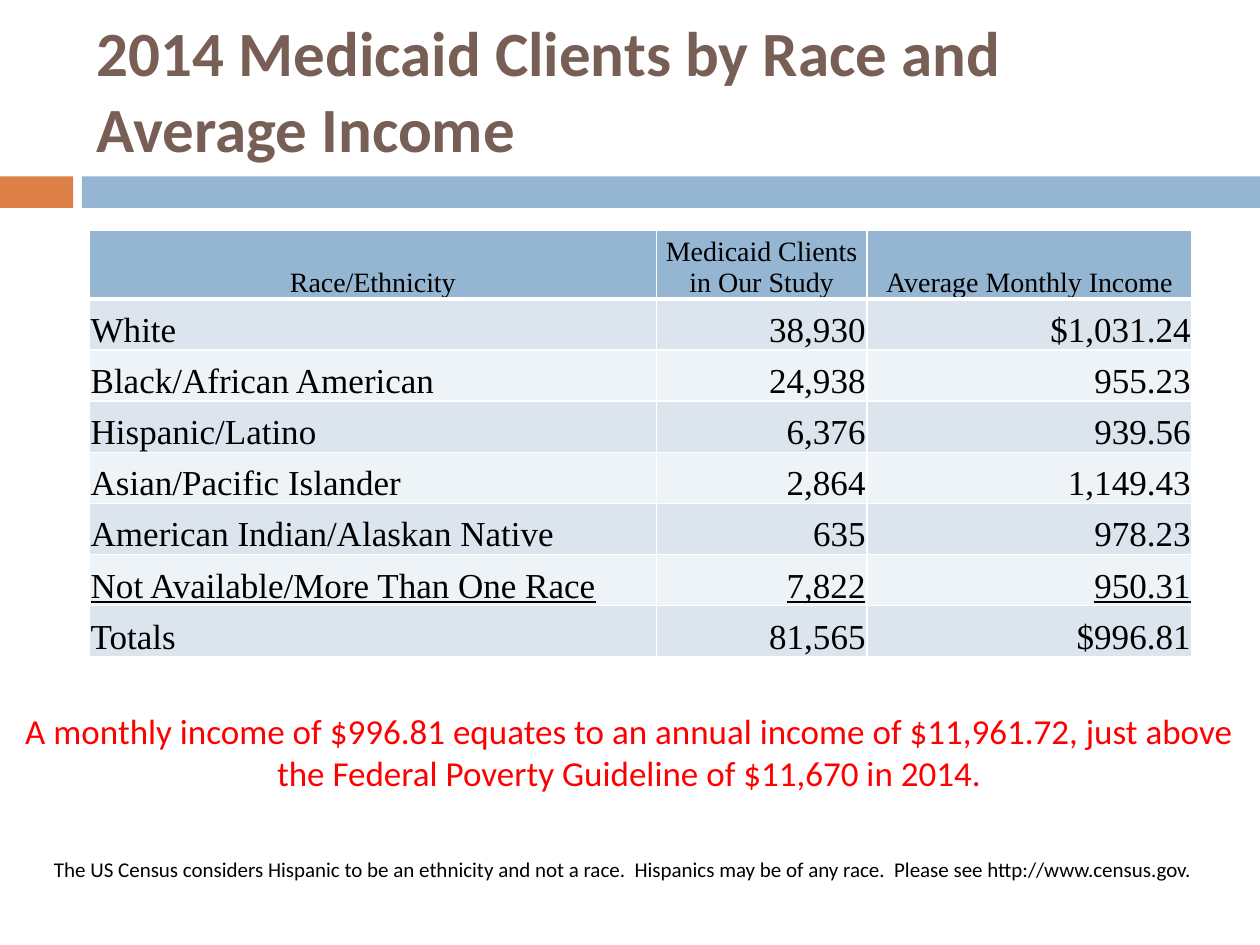
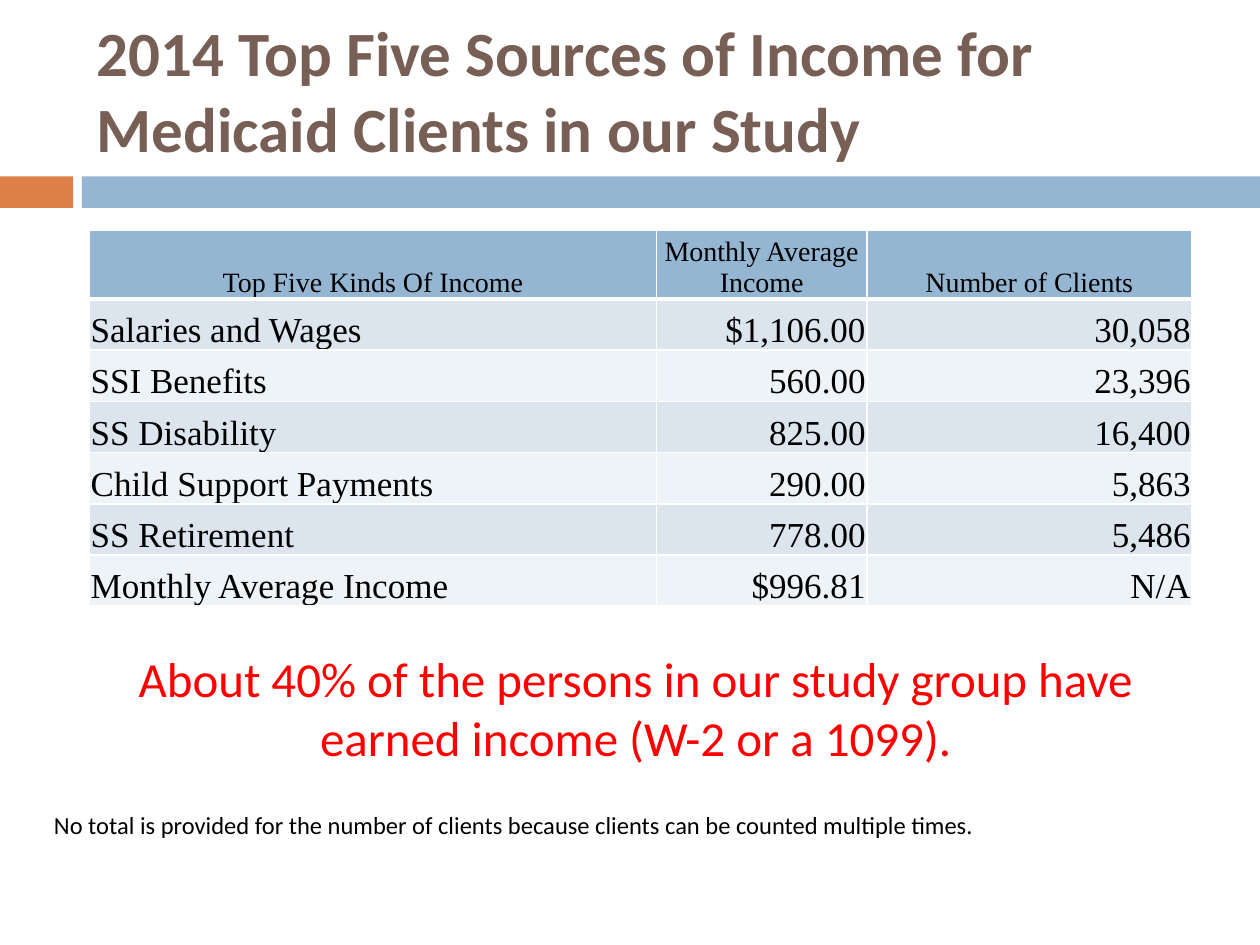
from dataclasses import dataclass

from lxml import etree
from pptx import Presentation
from pptx import util as u
from pptx.dml.color import RGBColor
from pptx.enum import shapes, text
from pptx.oxml import ns

SLIDES = [
    {
        "title": "2014 Medicaid Clients by Race and Average Income",
        "header": ("Race/Ethnicity", "Medicaid Clients in Our Study", "Average Monthly Income"),
        "rows": [
            ("White", "38,930", "$1,031.24"),
            ("Black/African American", "24,938", "955.23"),
            ("Hispanic/Latino", "6,376", "939.56"),
            ("Asian/Pacific Islander", "2,864", "1,149.43"),
            ("American Indian/Alaskan Native", "635", "978.23"),
            ("Not Available/More Than One Race", "7,822", "950.31"),
            ("Totals", "81,565", "$996.81"),
        ],
        "underlined_row": 6,
        "table_height": 3.38,
        "finding": "A monthly income of $996.81 equates to an annual income of $11,961.72, "
                   "just above the Federal Poverty Guideline of $11,670 in 2014.",
        "finding_box": (0.08, 5.58, 9.83, 0.77),
        "finding_size": 20,
        "footnote": "The US Census considers Hispanic to be an ethnicity and not a race.  "
                    "Hispanics may be of any race.  Please see http://www.census.gov.",
        "footnote_box": (0.33, 6.75, 9.42, 0.3),
        "footnote_size": 12,
    },
    {
        "title": "2014 Top Five Sources of Income for Medicaid Clients in our Study",
        "header": ("Top Five Kinds Of Income", "Monthly Average Income", "Number of Clients"),
        "rows": [
            ("Salaries and Wages", "$1,106.00", "30,058"),
            ("SSI Benefits", "560.00", "23,396"),
            ("SS Disability", "825.00", "16,400"),
            ("Child Support Payments", "290.00", "5,863"),
            ("SS Retirement", "778.00", "5,486"),
            ("Monthly Average Income", "$996.81", "N/A"),
        ],
        "underlined_row": None,
        "table_height": 2.98,
        "finding": "About 40% of the persons in our study group have earned income (W-2 or a 1099).",
        "finding_box": (0.71, 5.1, 8.67, 1.04),
        "finding_size": 28,
        "footnote": "No total is provided for the number of clients because clients "
                    "can be counted multiple times.",
        "footnote_box": (0.33, 6.38, 9.42, 0.34),
        "footnote_size": 14,
    },
]

TITLE_BOX = (0.67, 0.17, 8.92, 1.08)
TABLE_LEFT, TABLE_TOP = 0.71, 1.83
COLUMN_WIDTHS = (4.5, 1.67, 2.58)
HEADER_HEIGHT = 0.54


@dataclass(frozen=True)
class Theme:
    title: str = "775F55"
    accent: str = "DD8047"
    band: str = "94B6D2"
    stripes: tuple = ("EEF3F7", "DCE5EE")
    border: str = "FFFFFF"
    body: str = "000000"
    finding: str = "FF0000"
    font: str = "Calibri"
    table_font: str = "Times New Roman"
    title_size: int = 36
    header_size: int = 16
    cell_size: int = 20


THEME = Theme()
BANDS = [((0, 1.4, 0.58, 0.25), THEME.accent), ((0.65, 1.4, 9.35, 0.25), THEME.band)]


def inches(box):
    return [u.Inches(length) for length in box]


def write(frame, words, size, color, font=THEME.font, align=text.PP_ALIGN.LEFT,
          bold=False, underline=False):
    frame.text = words
    paragraph = frame.paragraphs[0]
    paragraph.alignment = align
    for run in paragraph.runs:
        run.font.name = font
        run.font.size = u.Pt(size)
        run.font.bold = bold
        run.font.underline = underline
        run.font.color.rgb = RGBColor.from_string(color)


def add_text(slide, box, words, size, color, anchor=text.MSO_ANCHOR.TOP, **style):
    frame = slide.shapes.add_textbox(*inches(box)).text_frame
    frame.word_wrap = True
    frame.vertical_anchor = anchor
    write(frame, words, size, color, **style)


def add_bands(slide):
    for box, color in BANDS:
        band = slide.shapes.add_shape(shapes.MSO_SHAPE.RECTANGLE, *inches(box))
        band.shadow.inherit = False
        band.fill.solid()
        band.fill.fore_color.rgb = RGBColor.from_string(color)
        band.line.fill.background()


def set_borders(cell, top, bottom):
    properties = cell._tc.get_or_add_tcPr()
    for side, points in (("L", 1), ("R", 1), ("T", top), ("B", bottom)):
        line = etree.SubElement(properties, ns.qn(f"a:ln{side}"), w=str(u.Pt(points)))
        fill = etree.SubElement(line, ns.qn("a:solidFill"))
        etree.SubElement(fill, ns.qn("a:srgbClr"), val=THEME.border)


def add_income_table(slide, content):
    rows = [content["header"], *content["rows"]]
    height = content["table_height"]
    box = (TABLE_LEFT, TABLE_TOP, sum(COLUMN_WIDTHS), height)
    table = slide.shapes.add_table(len(rows), len(COLUMN_WIDTHS), *inches(box)).table
    for column, width in zip(table.columns, COLUMN_WIDTHS):
        column.width = u.Inches(width)
    row_height = (height - HEADER_HEIGHT) / len(content["rows"])

    for row_index, row in enumerate(rows):
        is_header = row_index == 0
        table.rows[row_index].height = u.Inches(HEADER_HEIGHT if is_header else row_height)
        for column_index, words in enumerate(row):
            cell = table.cell(row_index, column_index)
            cell.margin_left = cell.margin_right = cell.margin_top = u.Inches(0.01)
            cell.margin_bottom = 0
            cell.vertical_anchor = text.MSO_ANCHOR.BOTTOM
            set_borders(cell, 3 if row_index == 1 else 1, 3 if is_header else 1)
            cell.fill.solid()
            color = THEME.band if is_header else THEME.stripes[row_index % 2]
            cell.fill.fore_color.rgb = RGBColor.from_string(color)
            if is_header:
                align = text.PP_ALIGN.CENTER
            else:
                align = text.PP_ALIGN.RIGHT if column_index else text.PP_ALIGN.LEFT
            write(cell.text_frame, words, THEME.header_size if is_header else THEME.cell_size,
                  THEME.body, font=THEME.table_font, align=align,
                  underline=row_index == content["underlined_row"])


def build_slide(presentation, content):
    slide = presentation.slides.add_slide(presentation.slide_layouts[6])
    add_bands(slide)
    add_text(slide, TITLE_BOX, content["title"], THEME.title_size, THEME.title,
             anchor=text.MSO_ANCHOR.MIDDLE, bold=True)
    add_text(slide, content["footnote_box"], content["footnote"],
             content["footnote_size"], THEME.body)
    add_text(slide, content["finding_box"], content["finding"],
             content["finding_size"], THEME.finding, align=text.PP_ALIGN.CENTER)
    add_income_table(slide, content)


def main():
    presentation = Presentation()
    presentation.slide_width, presentation.slide_height = u.Inches(10), u.Inches(7.5)
    for content in SLIDES:
        build_slide(presentation, content)
    presentation.save("out.pptx")


if __name__ == "__main__":
    main()
